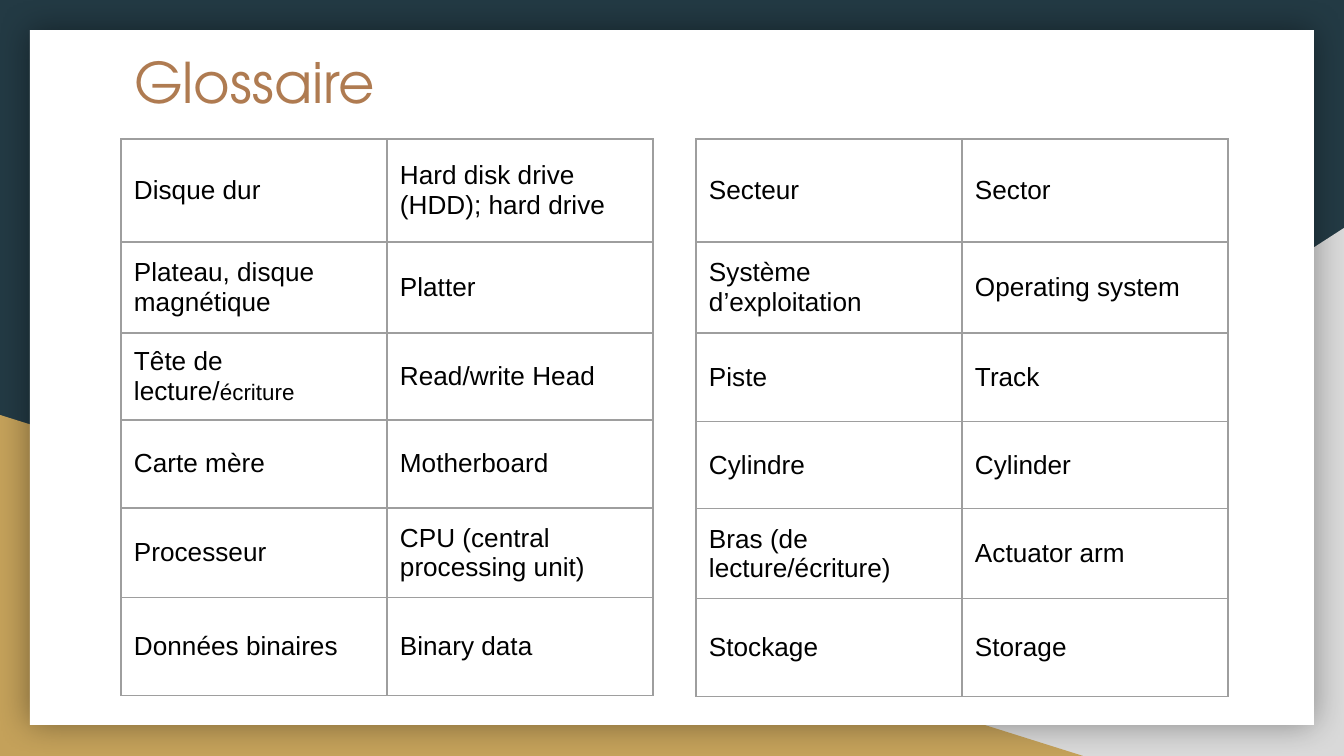
"""Build a French-English glossary slide with two tables on a framed panel."""
import lxml.etree
import pptx
import pptx.dml.color
import pptx.enum.shapes
import pptx.enum.text
import pptx.oxml.ns
import pptx.util

EMU_PER_PX = 914400 / 134.4
WIDTH, HEIGHT = 1344, 756
COLOURS = {
    "night": "233A44", "grey": "D9D9D9", "gold": "C4A15A", "white": "FFFFFF",
    "copper": "AF7B51", "border": "9E9E9E", "black": "000000",
}
TITLE = "Glossaire"
TITLE_FONT, BODY_FONT = "TeX Gyre Adventor", "Arial"
BODY_SIZE = 14
INSET = 13
TABLE_TOP, COLUMN_WIDTH = 139, 266
TABLES = [
    {
        "left": 121,
        "heights": [103, 91, 87, 88, 90, 98],
        "rows": [
            ("Disque dur", "Hard disk drive (HDD); hard drive"),
            ("Plateau, disque magnétique", "Platter"),
            ([("Tête de lecture/", BODY_SIZE), ("écriture", 12)], "Read/write Head"),
            ("Carte mère", "Motherboard"),
            ("Processeur", "CPU (central processing unit)"),
            ("Données binaires", "Binary data"),
        ],
    },
    {
        "left": 696,
        "heights": [103, 91, 89, 87, 90, 98],
        "rows": [
            ("Secteur", "Sector"),
            ("Système d’exploitation", "Operating system"),
            ("Piste", "Track"),
            ("Cylindre", "Cylinder"),
            ("Bras (de lecture/écriture)", "Actuator arm"),
            ("Stockage", "Storage"),
        ],
    },
]


def px(length):
    return pptx.util.Emu(round(length * EMU_PER_PX))


def rgb(name):
    return pptx.dml.color.RGBColor.from_string(COLOURS[name])


def add_xml(parent, tag, **attributes):
    element = lxml.etree.SubElement(parent, pptx.oxml.ns.qn(tag))
    for name, value in attributes.items():
        element.set(name, str(value))
    return element


def add_run(paragraph, text, size, font, colour):
    run = paragraph.add_run()
    run.text = text
    run.font.size = pptx.util.Pt(size)
    run.font.name = font
    run.font.color.rgb = rgb(colour)


def set_insets(target):
    target.margin_left = target.margin_right = px(INSET)
    target.margin_top = target.margin_bottom = px(INSET)


def add_plain_shape(slide, kind, box, colour):
    shape = slide.shapes.add_shape(kind, *map(px, box))
    shape.shadow.inherit = False
    shape.fill.solid()
    shape.fill.fore_color.rgb = rgb(colour)
    shape.line.fill.background()
    return shape


def add_backdrop(slide):
    slide.background.fill.solid()
    slide.background.fill.fore_color.rgb = rgb("night")
    kinds = pptx.enum.shapes.MSO_SHAPE
    right_corner = add_plain_shape(slide, kinds.RIGHT_TRIANGLE, (527, 228, 817, 528), "grey")
    right_corner.element.spPr.xfrm.set("flipH", "1")
    add_plain_shape(slide, kinds.RIGHT_TRIANGLE, (0, 415, 1083, 341), "gold")
    panel = add_plain_shape(slide, kinds.RECTANGLE, (30, 30, 1284, 695), "white")
    effects = panel.element.spPr.find(pptx.oxml.ns.qn("a:effectLst"))
    shadow = add_xml(effects, "a:outerShdw", blurRad=pptx.util.Pt(18), dist=0, dir=0,
                     algn="ctr", rotWithShape=0)
    add_xml(add_xml(shadow, "a:srgbClr", val=COLOURS["black"]), "a:alpha", val=40000)


def format_title(slide):
    title = slide.shapes.title
    title.left, title.top, title.width, title.height = map(px, (121, 35, 1103, 90))
    frame = title.text_frame
    frame.auto_size = pptx.enum.text.MSO_AUTO_SIZE.NONE
    frame.vertical_anchor = pptx.enum.text.MSO_ANCHOR.TOP
    set_insets(frame)
    paragraph = frame.paragraphs[0]
    paragraph.alignment = pptx.enum.text.PP_ALIGN.LEFT
    add_run(paragraph, TITLE, 30, TITLE_FONT, "copper")
    title.element.getparent().append(title.element)


def fill_cell(cell, content):
    properties = cell._tc.get_or_add_tcPr()
    for side in ("a:lnL", "a:lnR", "a:lnT", "a:lnB"):
        line = add_xml(properties, side, w=pptx.util.Pt(0.75))
        add_xml(add_xml(line, "a:solidFill"), "a:srgbClr", val=COLOURS["border"])
    cell.fill.background()
    cell.vertical_anchor = pptx.enum.text.MSO_ANCHOR.MIDDLE
    set_insets(cell)
    pieces = [(content, BODY_SIZE)] if isinstance(content, str) else content
    for text, size in pieces:
        add_run(cell.text_frame.paragraphs[0], text, size, BODY_FONT, "black")


def add_glossary(slide, left, heights, rows):
    columns = len(rows[0])
    box = (left, TABLE_TOP, columns * COLUMN_WIDTH, sum(heights))
    table = slide.shapes.add_table(len(rows), columns, *map(px, box)).table
    table.first_row = table.horz_banding = False
    for column in table.columns:
        column.width = px(COLUMN_WIDTH)
    for row, height, terms in zip(table.rows, heights, rows):
        row.height = px(height)
        for cell, term in zip(row.cells, terms):
            fill_cell(cell, term)


def main():
    presentation = pptx.Presentation()
    presentation.slide_width, presentation.slide_height = px(WIDTH), px(HEIGHT)
    slide = presentation.slides.add_slide(presentation.slide_layouts[5])
    add_backdrop(slide)
    format_title(slide)
    for glossary in TABLES:
        add_glossary(slide, **glossary)
    presentation.save("out.pptx")


if __name__ == "__main__":
    main()
